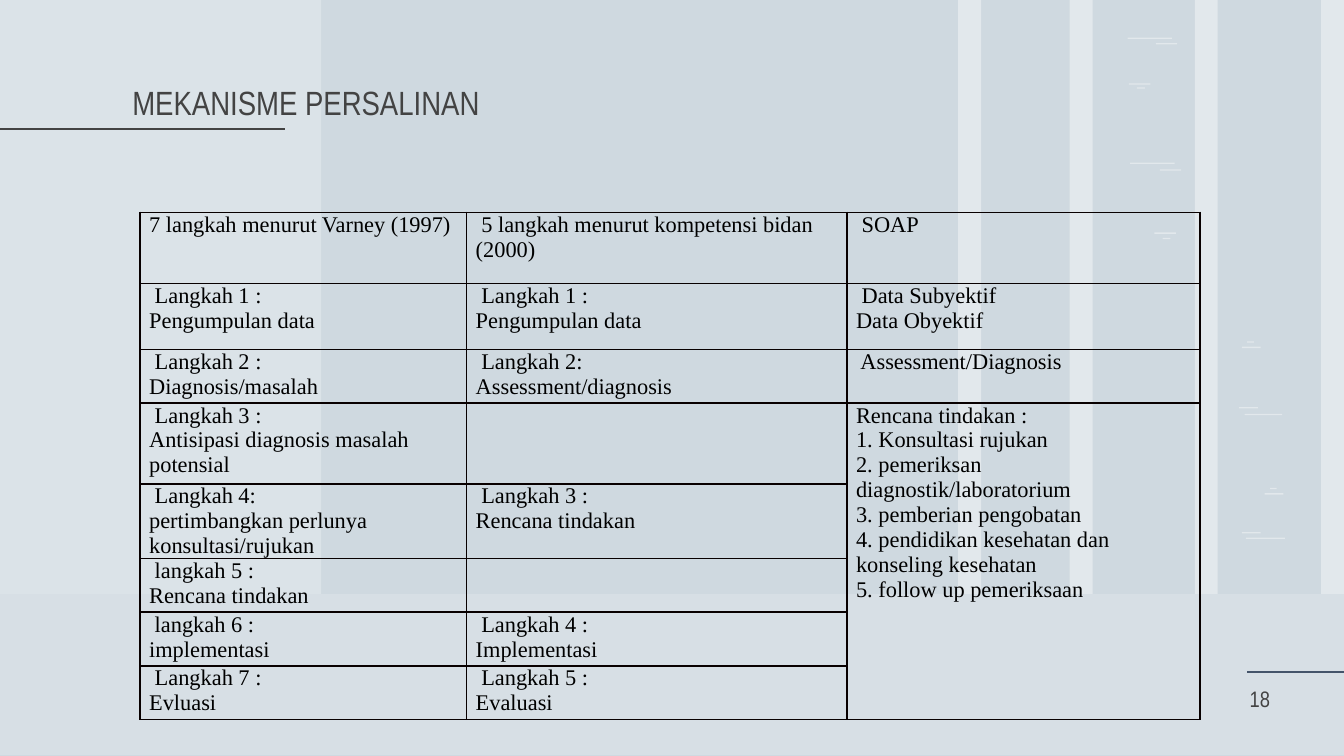
from lxml.etree import SubElement
from pptx import Presentation
from pptx.dml.color import RGBColor
from pptx.enum.shapes import MSO_CONNECTOR, MSO_SHAPE
from pptx.enum.text import MSO_ANCHOR, MSO_AUTO_SIZE, PP_ALIGN
from pptx.oxml import parse_xml
from pptx.oxml.ns import nsdecls, qn
from pptx.util import Inches, Pt

COLORS = {"background": "CFD9E0", "panel": "FFFFFF", "heading": "434343",
          "accent": "44546A", "border": "080000", "body": "000000"}
HEADING_FONT, BODY_FONT = "Arial Narrow", "Times New Roman"
TITLE, PAGE_NUMBER = "MEKANISME PERSALINAN", "18"

STRIPE_LEFTS = [7.13, 7.96, 8.89, 9.83]
STRIPE_WIDTH, HORIZON = 0.17, 4.42
DASHES = [(8.39, 0.28, 0.33), (8.6, 0.32, 0.16), (8.41, 1.21, 0.33),
          (8.63, 1.26, 0.16), (8.4, 0.62, 0.16), (8.46, 0.65, 0.06),
          (8.59, 1.73, 0.16), (8.65, 1.77, 0.06), (9.27, 4, 0.29),
          (9.24, 3.96, 0.14), (9.26, 3.08, 0.28), (9.22, 3.03, 0.14),
          (9.41, 3.67, 0.14), (9.45, 3.63, 0.05), (9.24, 2.58, 0.14),
          (9.28, 2.54, 0.05)]
RULES = [(9.28, 10, 5, "accent"), (-0.02, 2.12, 0.96, "heading")]

COLUMN_WIDTHS = [2.43, 2.83, 2.63]
ROW_HEIGHTS = [0.53, 0.49, 0.4, 0.6, 0.4, 0.4, 0.4, 0.4]
PLAN_ROW, PLAN_COLUMN = 3, 2
PLAN = "\n".join([
    "Rencana tindakan :", "1. Konsultasi rujukan",
    "2. pemeriksan diagnostik/laboratorium", "3. pemberian pengobatan",
    "4. pendidikan kesehatan dan konseling kesehatan",
    "5. follow up pemeriksaan"])
STEPS = [
    ("7 langkah menurut Varney (1997)",
     " 5 langkah menurut kompetensi bidan (2000)", " SOAP"),
    (" Langkah 1 :\nPengumpulan data", " Langkah 1 :\nPengumpulan data",
     " Data Subyektif\nData Obyektif"),
    (" Langkah 2 :\nDiagnosis/masalah", " Langkah 2:\nAssessment/diagnosis",
     " Assessment/Diagnosis"),
    (" Langkah 3 :\nAntisipasi diagnosis masalah potensial", "", PLAN),
    (" Langkah 4:\npertimbangkan perlunya konsultasi/rujukan",
     " Langkah 3 :\nRencana tindakan", ""),
    (" langkah 5 :\nRencana tindakan", "", ""),
    (" langkah 6 :\nimplementasi", " Langkah 4 :\nImplementasi", ""),
    (" Langkah 7 :\nEvluasi", " Langkah 5 :\nEvaluasi", ""),
]


def rgb(name):
    """Return the named palette colour."""
    return RGBColor.from_string(COLORS[name])


def add_panel(slide, left, top, width, height, opacity):
    """Add a translucent white rectangle."""
    panel = slide.shapes.add_shape(MSO_SHAPE.RECTANGLE, Inches(left), Inches(top),
                                   Inches(width), Inches(height))
    panel.shadow.inherit = False
    panel.line.fill.background()
    panel.fill.solid()
    panel.fill.fore_color.rgb = rgb("panel")
    color = panel._element.spPr.find(qn("a:solidFill")).find(qn("a:srgbClr"))
    SubElement(color, qn("a:alpha"), val=str(opacity * 1000))


def add_rule(slide, start, end, top, color):
    """Add a horizontal line."""
    rule = slide.shapes.add_connector(MSO_CONNECTOR.STRAIGHT, Inches(start),
                                      Inches(top), Inches(end), Inches(top))
    rule.line.color.rgb = rgb(color)
    rule.line.width = Pt(1.5)
    SubElement(rule._element.spPr, qn("a:effectLst"))


def style_text(frame, font_name, size, color):
    """Apply one font to every paragraph of a frame."""
    for paragraph in frame.paragraphs:
        for part in (paragraph, *paragraph.runs):
            part.font.name = font_name
            part.font.size = Pt(size)
            part.font.color.rgb = rgb(color)


def write_heading(box, text, size, align):
    """Write bottom-anchored heading text in a box."""
    frame = box.text_frame
    frame.text = text
    frame.word_wrap = True
    frame.auto_size = MSO_AUTO_SIZE.NONE
    frame.vertical_anchor = MSO_ANCHOR.BOTTOM
    frame.margin_left = frame.margin_right = Inches(0.1)
    frame.margin_top = frame.margin_bottom = Inches(0.1)
    frame.paragraphs[0].alignment = align
    style_text(frame, HEADING_FONT, size, "heading")


def format_cell(cell):
    """Clear the fill and draw the borders of a cell."""
    cell.margin_left = cell.margin_right = Inches(0.07)
    cell.margin_top = cell.margin_bottom = 0
    cell.fill.background()
    properties = cell._tc.get_or_add_tcPr()
    for position, side in enumerate(("lnL", "lnR", "lnT", "lnB")):
        properties.insert(position, parse_xml(
            f'<a:{side} {nsdecls("a")} w="{Pt(1)}"><a:solidFill>'
            f'<a:srgbClr val="{COLORS["border"]}"/></a:solidFill></a:{side}>'))


def add_steps_table(slide):
    """Add the comparison table of care steps."""
    table = slide.shapes.add_table(
        len(STEPS), len(COLUMN_WIDTHS), Inches(1.04), Inches(1.58),
        Inches(sum(COLUMN_WIDTHS)), Inches(sum(ROW_HEIGHTS))).table
    table.first_row = table.horz_banding = False
    for column, width in zip(table.columns, COLUMN_WIDTHS):
        column.width = Inches(width)
    for row, height, texts in zip(table.rows, ROW_HEIGHTS, STEPS):
        row.height = Inches(height)
        for cell, text in zip(row.cells, texts):
            cell.text_frame.text = text
            style_text(cell.text_frame, BODY_FONT, 12, "body")
            format_cell(cell)
    table.cell(PLAN_ROW, PLAN_COLUMN).merge(
        table.cell(len(STEPS) - 1, PLAN_COLUMN))


def main():
    """Build the slide and save it."""
    deck = Presentation()
    deck.slide_width = Inches(10)
    deck.slide_height = deck.slide_width * 9 // 16
    slide = deck.slides.add_slide(deck.slide_layouts[5])
    slide.background.fill.solid()
    slide.background.fill.fore_color.rgb = rgb("background")

    for left in STRIPE_LEFTS:
        add_panel(slide, left, 0, STRIPE_WIDTH, HORIZON, 40)
    for left, top, width in DASHES:
        add_panel(slide, left, top, width, 0.01, 40)
    add_panel(slide, 0, 0, 2.39, HORIZON, 27)
    add_panel(slide, 0, HORIZON, 10, 1.2, 17)
    for rule in RULES:
        add_rule(slide, *rule)

    page_box = slide.shapes.add_textbox(Inches(9.2), Inches(4.97),
                                        Inches(0.77), Inches(0.43))
    write_heading(page_box, PAGE_NUMBER, 12, PP_ALIGN.LEFT)
    title = slide.shapes.title
    title.left, title.top = Inches(-0.04), Inches(0.69)
    title.width, title.height = Inches(3.71), Inches(0.32)
    write_heading(title, TITLE, 18, PP_ALIGN.RIGHT)
    page_box._element.addnext(title._element)
    add_steps_table(slide)
    deck.save("out.pptx")


if __name__ == "__main__":
    main()
